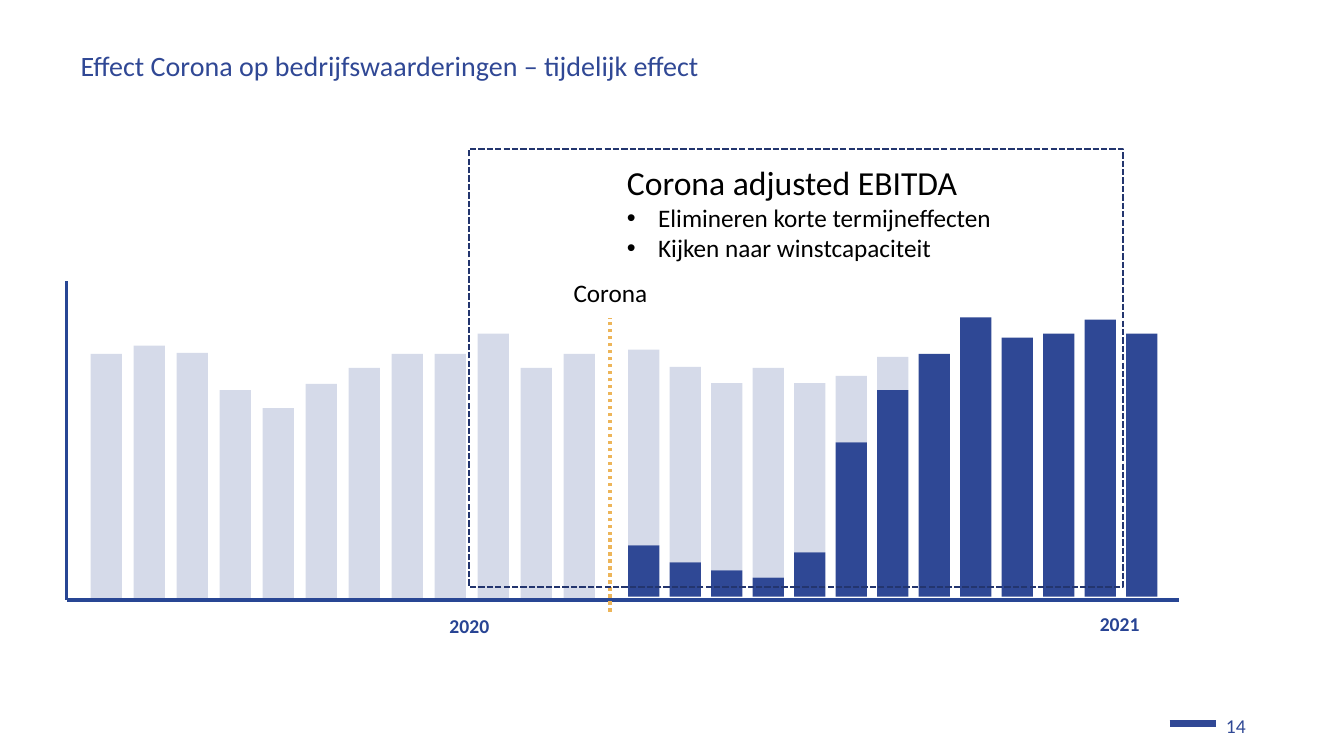
"""Builds a slide on the temporary effect of Corona on company valuations."""
from lxml import etree
from pptx import Presentation
from pptx import util as u
from pptx.dml.color import RGBColor
from pptx.enum import dml, shapes, text
from pptx.oxml.ns import qn

TITLE = "Effect Corona op bedrijfswaarderingen – tijdelijk effect"
HEADING = "Corona adjusted EBITDA"
BULLETS = ["Elimineren korte termijneffecten", "Kijken naar winstcapaciteit"]
YEARS = [("2020", 4.23, 6.04), ("2021", 10.68, 6.02)]
PAGE = "14"

COLORS = {"bar": "2F4895", "title": "304895", "axis": "284694", "year": "284494",
          "corona": "EDB559", "frame": "23356E", "text": "000000"}

BEFORE_TOPS = [3.51, 3.43, 3.5, 3.87, 4.05, 3.81, 3.65, 3.51, 3.51, 3.31, 3.65, 3.51]
AFTER_TOPS = [5.41, 5.58, 5.66, 5.73, 5.48, 4.39, 3.87, 3.51, 3.15, 3.35, 3.31, 3.17, 3.31]
LOST_TOPS = [3.47, 3.64, 3.8, 3.65, 3.8, 3.73, 3.54]

SLIDE_W, SLIDE_H = 13.33, 7.5
AXIS_X, AXIS_TOP, AXIS_END, BASE = 0.66, 2.79, 11.69, 5.95
AFTER_BASE = 5.92
BAR_W = 0.31
BEFORE_SPAN, AFTER_SPAN = (0.9, 5.59), (6.23, 11.17)
CORONA_X = 6.05
FONT = "Calibri"


def rgb(name):
    return RGBColor.from_string(COLORS[name])


def columns(span, count):
    first, last = span
    return [first + i * (last - first) / (count - 1) for i in range(count)]


def add_rect(s, x, y, w, h):
    sp = s.shapes.add_shape(shapes.MSO_SHAPE.RECTANGLE,
                            *(u.Inches(v) for v in (x, y, w, h)))
    sp.shadow.inherit = False
    return sp


def add_bar(s, x, top, bottom, alpha=None):
    sp = add_rect(s, x, top, BAR_W, bottom - top)
    sp.fill.solid()
    sp.fill.fore_color.rgb = rgb("bar")
    sp.line.fill.background()
    if alpha:
        color = sp.fill._xPr.find(".//" + qn("a:srgbClr"))
        etree.SubElement(color, qn("a:alpha"), val=str(alpha * 1000))


def add_line(s, x1, y1, x2, y2, color, width=2.5, dash=None):
    line = s.shapes.add_connector(shapes.MSO_CONNECTOR.STRAIGHT,
                                  *(u.Inches(v) for v in (x1, y1, x2, y2)))
    line.line.color.rgb = rgb(color)
    line.line.width = u.Pt(width)
    if dash:
        line.line.dash_style = dash
    etree.SubElement(line._element.spPr, qn("a:effectLst"))


def add_text(s, lines, x, y, w, h, size=18, color="text", bold=False,
             align=text.PP_ALIGN.LEFT, wrap=True, margin=None, bullet_size=18):
    tf = s.shapes.add_textbox(*(u.Inches(v) for v in (x, y, w, h))).text_frame
    tf.word_wrap = wrap
    if margin is not None:
        tf.margin_left = tf.margin_right = tf.margin_top = tf.margin_bottom = u.Inches(margin)
    for i, line in enumerate(lines):
        p = tf.paragraphs[0] if i == 0 else tf.add_paragraph()
        p.alignment = align
        if i:
            pPr = p._p.get_or_add_pPr()
            pPr.set("marL", str(u.Inches(0.31)))
            pPr.set("indent", str(-u.Inches(0.31)))
            etree.SubElement(pPr, qn("a:buFont"), typeface="Arial")
            etree.SubElement(pPr, qn("a:buChar"), char="•")
        r = p.add_run()
        r.text = line
        r.font.name = FONT
        r.font.size = u.Pt(bullet_size if i else size)
        r.font.bold = bold
        r.font.color.rgb = rgb(color)


def main():
    prs = Presentation()
    prs.slide_width, prs.slide_height = u.Inches(SLIDE_W), u.Inches(SLIDE_H)
    s = prs.slides.add_slide(prs.slide_layouts[6])

    add_text(s, [PAGE], 12.06, 7.03, 0.6, 0.34, size=14, color="bar")
    add_line(s, 11.6, 7.18, 12.06, 7.18, "title", width=5.15)
    add_text(s, [TITLE], 0.8, 0.48, 12.21, 0.34, size=20, color="title", margin=0)

    add_line(s, AXIS_X, AXIS_TOP, AXIS_X, BASE, "axis")
    add_line(s, AXIS_X, BASE, AXIS_END, BASE, "axis")
    add_line(s, CORONA_X, 6.07, CORONA_X, 3.15, "corona", dash=dml.MSO_LINE.ROUND_DOT)

    for x, top in zip(columns(BEFORE_SPAN, len(BEFORE_TOPS)), BEFORE_TOPS):
        add_bar(s, x, top, BASE, alpha=20)
    after_columns = columns(AFTER_SPAN, len(AFTER_TOPS))
    for x, top in zip(after_columns, AFTER_TOPS):
        add_bar(s, x, top, AFTER_BASE)
    for x, top, bottom in zip(after_columns, LOST_TOPS, AFTER_TOPS):
        add_bar(s, x, top, bottom, alpha=20)

    add_text(s, [HEADING, *BULLETS], 6.12, 1.56, 4.13, 1.11, size=24)
    frame = add_rect(s, 4.65, 1.48, 6.49, 4.34)
    frame.fill.background()
    frame.line.color.rgb = rgb("frame")
    frame.line.width = u.Pt(1.5)
    frame.line.dash_style = dml.MSO_LINE.SQUARE_DOT

    add_text(s, ["Corona"], 5.59, 2.7, 0.94, 0.4, wrap=False)
    for year, x, y in YEARS:
        add_text(s, [year], x, y, 0.85, 0.34, size=14, color="year", bold=True,
                 align=text.PP_ALIGN.CENTER)
    prs.save("out.pptx")


if __name__ == "__main__":
    main()
